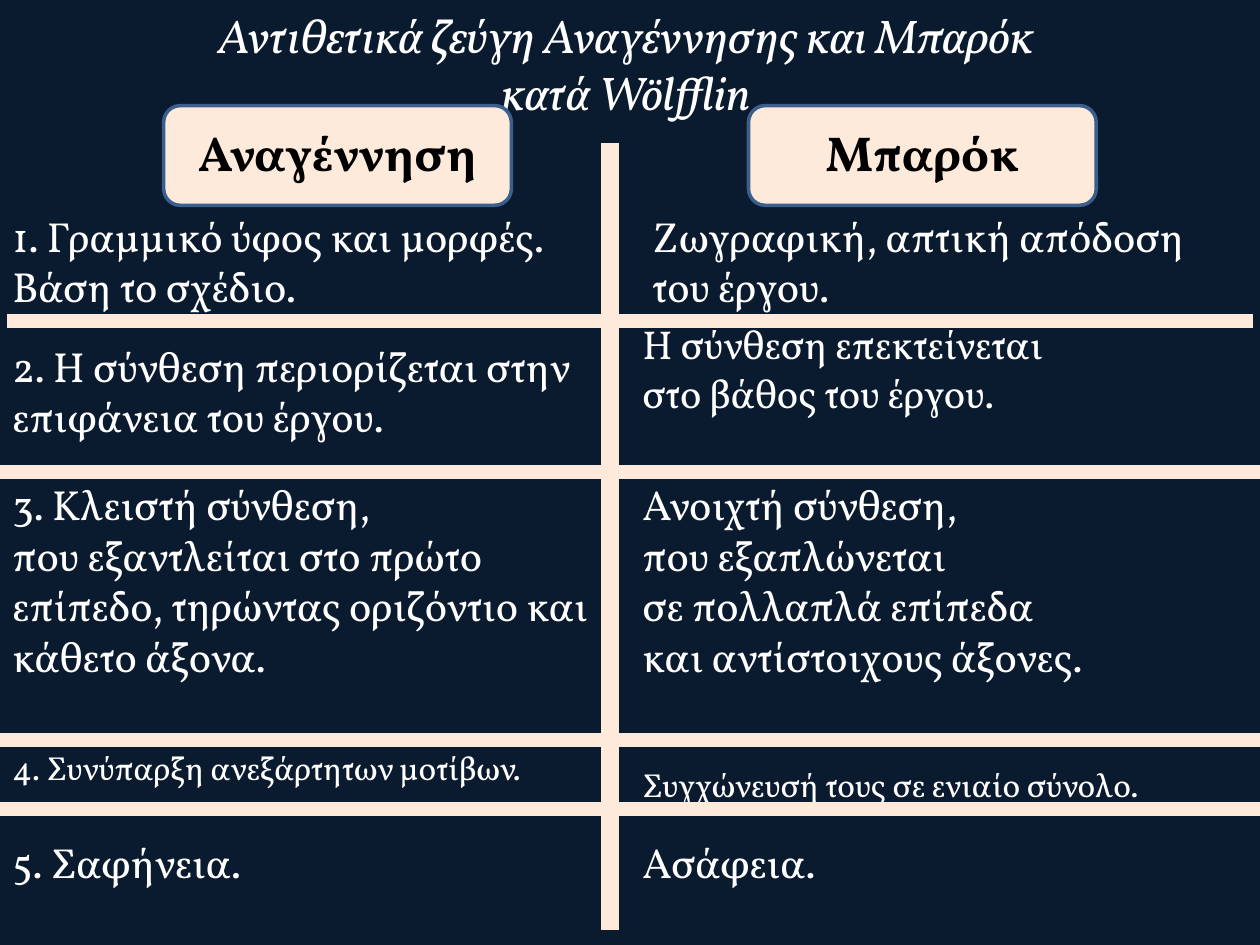
from pptx import Presentation
from pptx.dml.color import RGBColor
from pptx.enum.shapes import MSO_SHAPE
from pptx.enum.text import MSO_ANCHOR, MSO_AUTO_SIZE, PP_ALIGN
from pptx.util import Cm, Pt

NAVY, CREAM, BLUE, WHITE, BLACK = "0B1B2F", "FDEADA", "3A5F8C", "FFFFFF", "000000"
WIDE, HIGH, MID = 25.4, 19.05, 12.7
LINE = 1.22  # line height as a share of the font size

TITLE = "Αντιθετικά ζεύγη Αναγέννησης και Μπαρόκ \vκατά Wölfflin "
HEADS = [(3.3, "Αναγέννηση"), (15.09, "Μπαρόκ")]

# Each cell: text, font size, line count, shift right, shift down
# Each row: top, left cell, right cell, bar below as (left, top) or None
ROWS = [
    (4.11, ("1. Γραμμικό ύφος και μορφές. Βάση το σχέδιο.", 24, 2, 0, 0),
     ("Ζωγραφική, απτική απόδοση του έργου.", 24, 2, 0.2, 0), (-4.39, 5.87)),
    (6.73, ("2. Η σύνθεση περιορίζεται στην επιφάνεια του έργου.", 24, 2, 0, 0),
     ("Η σύνθεση επεκτείνεται\vστο βάθος του έργου.", 23, 2, 0, -0.41),
     (-4.7, 8.92)),
    (9.53, ("3. Κλειστή σύνθεση,\vπου εξαντλείται στο πρώτο επίπεδο, "
            "τηρώντας οριζόντιο και κάθετο άξονα.", 24, 4, 0, 0),
     ("Ανοιχτή σύνθεση,\vπου εξαπλώνεται\vσε πολλαπλά επίπεδα\v"
      "και αντίστοιχους άξονες.", 24, 4, 0, 0), (-4.7, 14.33)),
    (14.94, ("4. Συνύπαρξη ανεξάρτητων μοτίβων.", 19, 1, 0, 0),
     ("Συγχώνευσή τους σε ενιαίο σύνολο.", 19, 1, 0, 0.35), (-4.7, 15.72)),
    (16.74, ("5. Σαφήνεια.", 24, 1, 0, 0), ("Ασάφεια.", 24, 1, 0, 0), None),
]


def color(code):
    return RGBColor.from_string(code)


def apply(item, form):
    for key, value in form.items():
        setattr(item, key, value)


def write(frame, text, size, tint=WHITE, align=PP_ALIGN.LEFT,
          anchor=MSO_ANCHOR.TOP, **style):
    apply(frame, {"word_wrap": True, "auto_size": MSO_AUTO_SIZE.NONE,
                  "vertical_anchor": anchor})
    para = frame.paragraphs[0]
    para.text = text
    para.alignment = align
    for run in para.runs:
        apply(run.font, {"name": "Vollkorn", "size": Pt(size), **style})
        run.font.color.rgb = color(tint)


def shape(slide, kind, box):
    item = slide.shapes.add_shape(kind, *map(Cm, box))
    item.shadow.inherit = False
    item.fill.solid()
    item.fill.fore_color.rgb = color(CREAM)
    return item


def title(slide, box):
    item = slide.shapes.title
    apply(item, dict(zip(("left", "top", "width", "height"), map(Cm, box))))
    write(item.text_frame, TITLE, 27, align=PP_ALIGN.CENTER, italic=True)


def bar(slide, box, turn=0):
    item = shape(slide, MSO_SHAPE.MATH_MINUS, box)
    item.line.fill.background()
    item.rotation = turn


def head(slide, box, text):
    item = shape(slide, MSO_SHAPE.ROUNDED_RECTANGLE, box)
    item.line.color.rgb = color(BLUE)
    item.line.width = Pt(2)
    item.text_frame.margin_bottom = Cm(0.27)
    write(item.text_frame, text, 28, BLACK, PP_ALIGN.CENTER,
          MSO_ANCHOR.MIDDLE, bold=True)


def cell(slide, box, text, size, lines, right, down):
    left, top, width = box
    tall = lines * size * LINE * 2.54 / 72 + 0.25
    item = slide.shapes.add_textbox(Cm(left + right), Cm(top + down),
                                    Cm(width - right), Cm(tall))
    write(item.text_frame, text, size)


def table(slide):
    for top, first, second, rule in ROWS:
        cell(slide, (0, top, 12.1), *first)
        cell(slide, (MID, top, 12.6), *second)
        if rule:
            left, high = rule
            bar(slide, (left, high, WIDE - 2 * left, 1.19))


def main():
    deck = Presentation()
    apply(deck, {"slide_width": Cm(WIDE), "slide_height": Cm(HIGH)})
    slide = deck.slides.add_slide(deck.slide_layouts[5])
    slide.background.fill.solid()
    slide.background.fill.fore_color.rgb = color(NAVY)

    # Title, centre divider and column heads
    title(slide, (0, 0, WIDE, 2.57))
    bar(slide, (1.5, 10.01, 21.59, 1.6), 90)
    for left, text in HEADS:
        head(slide, (left, 2.13, 7.01, 2.01), text)

    # Five pairs of opposites
    table(slide)
    deck.save("out.pptx")


if __name__ == "__main__":
    main()
